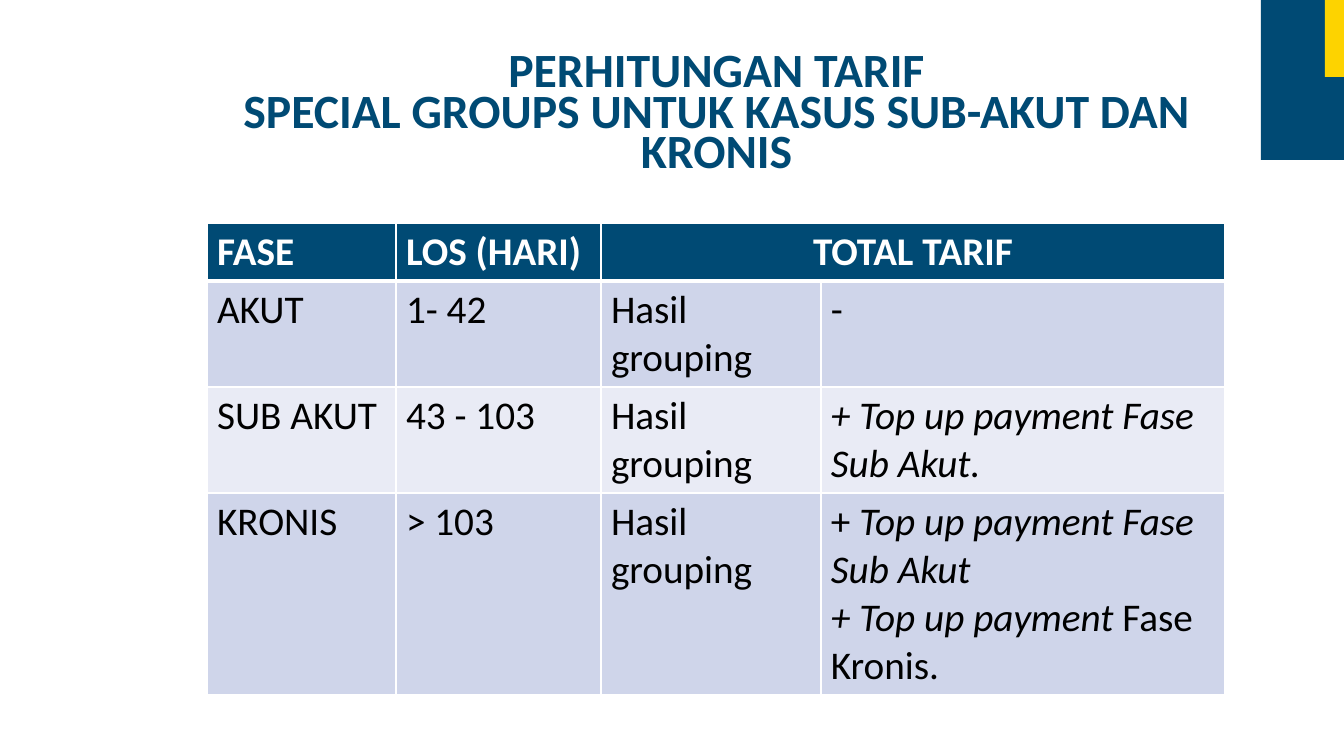
from lxml import etree
from pptx import Presentation
from pptx.dml.color import RGBColor
from pptx.enum import shapes, text
from pptx.oxml import ns
from pptx import util as u

FONT = "Calibri"
NAVY = RGBColor(0x00, 0x4A, 0x74)
YELLOW = RGBColor(0xFD, 0xD3, 0x00)
WHITE = RGBColor(0xFF, 0xFF, 0xFF)
BLACK = RGBColor(0x00, 0x00, 0x00)
BANDS = [RGBColor(0xCF, 0xD5, 0xEA), RGBColor(0xE9, 0xEB, 0xF5)]

TITLE = "PERHITUNGAN TARIF\vSPECIAL GROUPS UNTUK KASUS SUB-AKUT DAN KRONIS"
# A cell is a list of paragraphs, a paragraph a list of (words, italic) runs
HEADER = [[[(words, False)]] for words in ("FASE", "LOS (HARI)", "TOTAL TARIF", "")]
PHASES = [
    ("AKUT", "1- 42", [[("-", False)]]),
    ("SUB AKUT", "43 - 103", [[("+ Top up payment Fase Sub Akut.", True)]]),
    ("KRONIS", "> 103", [
        [("+ ", False), ("Top up payment Fase Sub Akut", True)],
        [("+ Top up payment ", True), ("Fase Kronis.", False)],
    ]),
]
ROWS = [HEADER] + [
    [[[(phase, False)]], [[(days, False)]], [[("Hasil grouping", False)]], top_up]
    for phase, days, top_up in PHASES
]

# Layout in px
SLIDE_SIZE = (1344, 756)
TITLE_BOX = (207, 46, 1019, 140)
TABLE_LEFT, TABLE_TOP = 207, 223
COLUMN_WIDTHS = [189, 205, 220, 404]
ROW_HEIGHTS = [57, 106, 106, 201]
CORNER_BLOCKS = [((1261, 0, 83, 160), NAVY), ((1325, 0, 19, 77), YELLOW)]


def px(length):
    return u.Emu(round(length * 914400 / 100.8))


def style_font(font, size, color, bold=False, italic=False):
    font.name, font.size, font.bold, font.italic = FONT, u.Pt(size), bold, italic
    font.color.rgb = color


def set_borders(cell, widths):
    properties = cell._tc.get_or_add_tcPr()
    for side, points in widths.items():
        line = etree.SubElement(properties, ns.qn(f"a:ln{side}"), w=str(u.Pt(points)))
        fill = etree.SubElement(line, ns.qn("a:solidFill"))
        etree.SubElement(fill, ns.qn("a:srgbClr"), val=str(WHITE))


def fill_cell(cell, paragraphs, row_index):
    is_header = row_index == 0
    set_borders(cell, {"L": 1, "R": 1, "T": 3 if row_index == 1 else 1,
                       "B": 3 if is_header else 1})
    cell.fill.solid()
    cell.fill.fore_color.rgb = NAVY if is_header else BANDS[(row_index - 1) % 2]
    for index, runs in enumerate(paragraphs):
        frame = cell.text_frame
        paragraph = frame.add_paragraph() if index else frame.paragraphs[0]
        for words, italic in runs:
            if words:
                run = paragraph.add_run()
                run.text = words
                style_font(run.font, 28, WHITE if is_header else BLACK, is_header, italic)


def add_tariff_table(slide):
    frame = slide.shapes.add_table(
        len(ROWS), len(COLUMN_WIDTHS), px(TABLE_LEFT), px(TABLE_TOP),
        px(sum(COLUMN_WIDTHS)), px(sum(ROW_HEIGHTS)))
    table = frame.table
    for column, width in zip(table.columns, COLUMN_WIDTHS):
        column.width = px(width)
    for row, height in zip(table.rows, ROW_HEIGHTS):
        row.height = px(height)
    for row_index, cells in enumerate(ROWS):
        for column_index, paragraphs in enumerate(cells):
            fill_cell(table.cell(row_index, column_index), paragraphs, row_index)
    # The total heading spans the last two columns
    total = table.cell(0, 2)
    total.merge(table.cell(0, 3))
    total.text_frame.paragraphs[0].alignment = text.PP_ALIGN.CENTER


def add_title(slide):
    frame = slide.shapes.add_textbox(*map(px, TITLE_BOX)).text_frame
    frame.word_wrap = True
    frame.vertical_anchor = text.MSO_ANCHOR.MIDDLE
    frame.text = TITLE
    paragraph = frame.paragraphs[0]
    paragraph.alignment = text.PP_ALIGN.CENTER
    paragraph.line_spacing = 0.7
    for run in paragraph.runs:
        style_font(run.font, 34.1, NAVY, bold=True)


def add_corner_blocks(slide):
    for box, color in CORNER_BLOCKS:
        shape = slide.shapes.add_shape(shapes.MSO_SHAPE.RECTANGLE, *map(px, box))
        shape.shadow.inherit = False
        shape.fill.solid()
        shape.fill.fore_color.rgb = color
        shape.line.fill.background()


def main():
    presentation = Presentation()
    presentation.slide_width, presentation.slide_height = map(px, SLIDE_SIZE)
    slide = presentation.slides.add_slide(presentation.slide_layouts[6])
    add_tariff_table(slide)
    add_title(slide)
    add_corner_blocks(slide)
    presentation.save("out.pptx")


if __name__ == "__main__":
    main()
